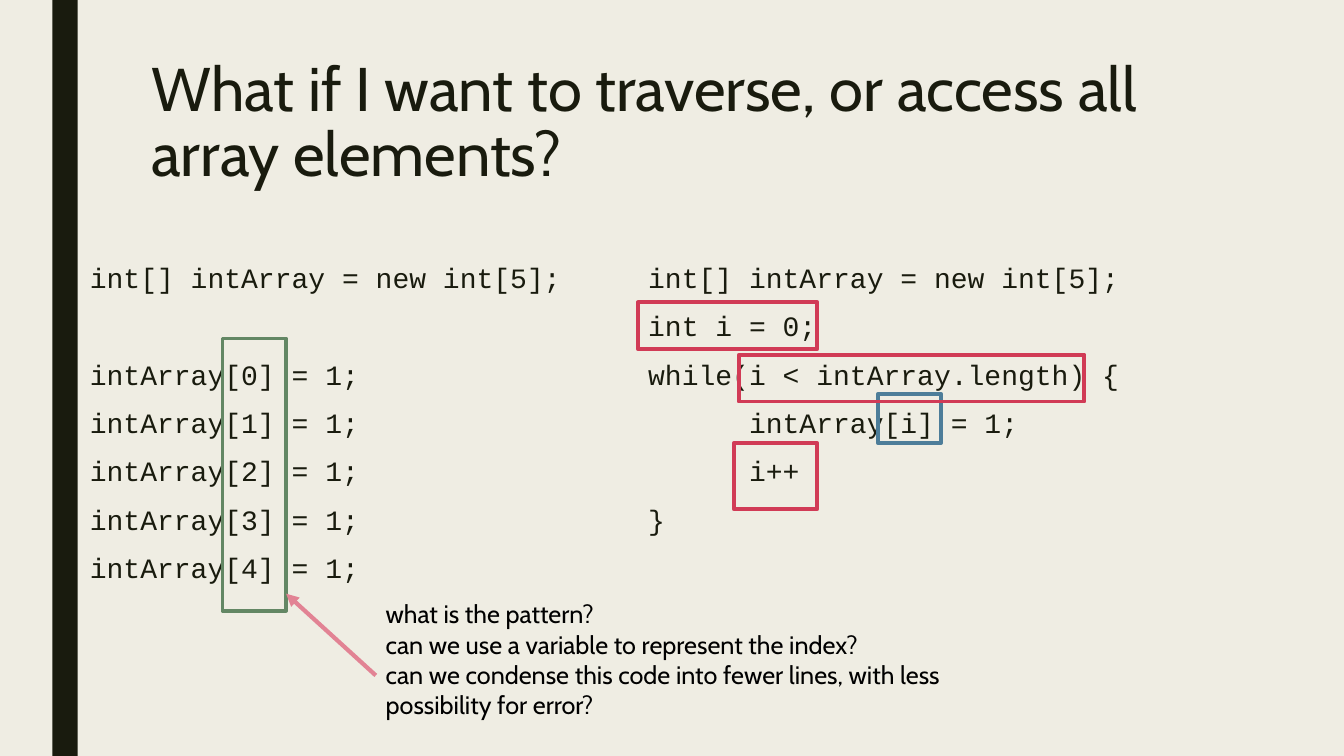
import pptx
import pptx.util
import pptx.dml.color
import pptx.enum.shapes
import pptx.enum.text
import pptx.oxml
import pptx.oxml.ns

Cm = pptx.util.Cm
Pt = pptx.util.Pt
RGBColor = pptx.dml.color.RGBColor
MSO_SHAPE = pptx.enum.shapes.MSO_SHAPE

COLORS = {
    "background": "EFEDE3",
    "ink": "191B0E",
    "black": "000000",
    "green": "638764",
    "blue": "4D7D99",
    "red": "D13B56",
    "pink": "E28394",
}

TITLE = "What if I want to traverse, or access all array elements?"
DECLARATION = "int[] intArray = new int[5];"
UNROLLED_CODE = [DECLARATION] + [f"intArray[{index}] = 1;" for index in range(5)]
LOOP_CODE = [
    DECLARATION,
    "int i = 0;",
    "while(i < intArray.length) {",
    "      intArray[i] = 1;",
    "      i++",
    "}",
]
QUESTIONS = [
    "what is the pattern?",
    "can we use a variable to represent the index?",
    "can we condense this code into fewer lines, with less possibility for error?",
]

BAR_BOX = (1.32, 0, 0.64, 19.05)
TITLE_BOX = (3.56, 1.35, 26.67, 4.11)
UNROLLED_BOX = (2.01, 6.5, 14.58, 9.96)
LOOP_BOX = (16.08, 6.5, 17.53, 9.96)
QUESTIONS_BOX = (9.47, 14.96, 15.7, 4.11)
HIGHLIGHTS = [
    ("green", (5.61, 8.53, 1.6, 6.86)),
    ("blue", (22.12, 9.93, 1.6, 1.23)),
    ("red", (18.49, 11.17, 2.11, 1.66)),
    ("red", (16.08, 7.62, 4.52, 1.18)),
    ("red", (18.62, 8.94, 8.71, 1.18)),
]
ARROW = (9.47, 17.02, 7.21, 14.96)

TITLE_FORMAT = {"name": "Cabin", "size": Pt(44)}
CODE_FORMAT = {"name": "Courier New", "size": Pt(20)}
QUESTION_FORMAT = {"name": "Cabin", "size": Pt(18)}
TITLE_SPACING = {"line_spacing": 0.89}
CODE_SPACING = {"line_spacing": 0.94, "space_before": Pt(10), "space_after": Pt(2)}
FRAME_FORMAT = {
    "word_wrap": True,
    "auto_size": pptx.enum.text.MSO_AUTO_SIZE.NONE,
    "vertical_anchor": pptx.enum.text.MSO_ANCHOR.TOP,
}
BLANK_LINE_GAP = Pt(44.6)


def color(name):
    return RGBColor.from_string(COLORS[name])


def apply(target, values):
    for name, value in values.items():
        setattr(target, name, value)


def place(shape, box):
    apply(shape, dict(zip(("left", "top", "width", "height"), map(Cm, box))))


def add_element(parent, tag, **attributes):
    child = parent.makeelement(pptx.oxml.ns.qn(tag), attributes)
    parent.append(child)


def write(shape, box, lines, font_format, color_name, spacing):
    place(shape, box)
    frame = shape.text_frame
    apply(frame, FRAME_FORMAT)
    frame.text = "\n".join(lines)
    for paragraph in frame.paragraphs:
        properties = paragraph._p.get_or_add_pPr()
        properties.set("marL", "0")
        properties.set("indent", "0")
        add_element(properties, "a:buNone")
        paragraph.alignment = pptx.enum.text.PP_ALIGN.LEFT
        apply(paragraph, spacing)
        for run in paragraph.runs:
            apply(run.font, font_format)
            run.font.color.rgb = color(color_name)
    frame.paragraphs[0].space_before = Pt(0)
    return frame


def add_rectangle(slide, box):
    shape = slide.shapes.add_shape(MSO_SHAPE.RECTANGLE, *map(Cm, box))
    shape.shadow.inherit = False
    return shape


def main():
    presentation = pptx.Presentation()
    apply(presentation, {"slide_width": Cm(33.87), "slide_height": Cm(19.05)})
    slide = presentation.slides.add_slide(presentation.slide_layouts[3])
    slide.background.fill.solid()
    slide.background.fill.fore_color.rgb = color("background")

    bar = add_rectangle(slide, BAR_BOX)
    bar.fill.solid()
    bar.fill.fore_color.rgb = color("ink")
    bar.line.fill.background()

    title, unrolled, loop = slide.placeholders
    write(title, TITLE_BOX, [TITLE], TITLE_FORMAT, "ink", TITLE_SPACING)
    unrolled_frame = write(unrolled, UNROLLED_BOX, UNROLLED_CODE, CODE_FORMAT, "ink", CODE_SPACING)
    unrolled_frame.paragraphs[1].space_before = BLANK_LINE_GAP
    write(loop, LOOP_BOX, LOOP_CODE, CODE_FORMAT, "ink", CODE_SPACING)
    questions = slide.shapes.add_textbox(*map(Cm, QUESTIONS_BOX))
    write(questions, QUESTIONS_BOX, QUESTIONS, QUESTION_FORMAT, "black", {})

    for color_name, box in HIGHLIGHTS:
        highlight = add_rectangle(slide, box)
        highlight.fill.background()
        highlight.line.color.rgb = color(color_name)
        highlight.line.width = Pt(2.75)

    arrow = slide.shapes.add_connector(
        pptx.enum.shapes.MSO_CONNECTOR.STRAIGHT, *map(Cm, ARROW)
    )
    arrow.line.color.rgb = color("pink")
    arrow.line.width = Pt(3)
    add_element(arrow.line._get_or_add_ln(), "a:tailEnd", type="triangle")
    add_element(arrow._element.spPr, "a:effectLst")

    presentation.save("out.pptx")


if __name__ == "__main__":
    main()
